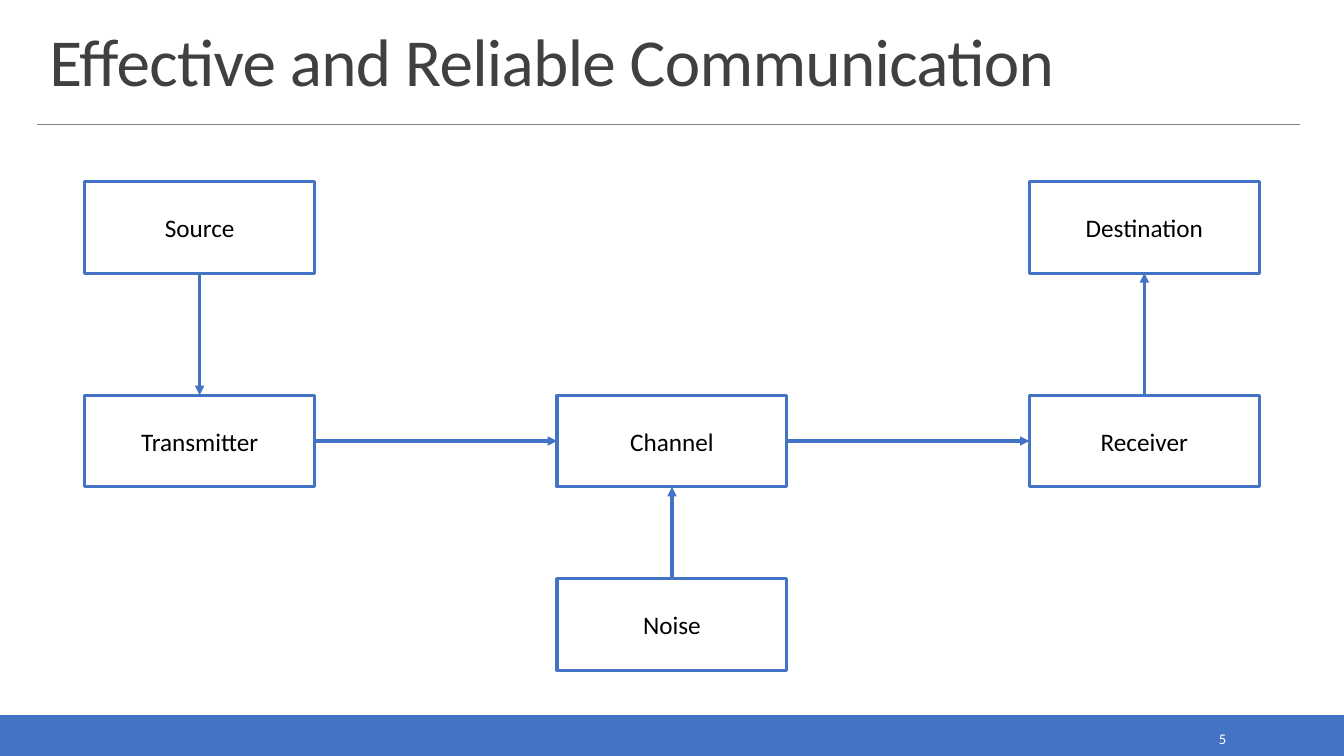
"""Builds the communication system block diagram slide."""
import pptx
import pptx.dml.color
import pptx.enum.shapes
import pptx.enum.text
import pptx.oxml.ns
import pptx.util
from lxml import etree

Inches = pptx.util.Inches
Pt = pptx.util.Pt
qn = pptx.oxml.ns.qn
RGBColor = pptx.dml.color.RGBColor
RECTANGLE = pptx.enum.shapes.MSO_SHAPE.RECTANGLE
MIDDLE = pptx.enum.text.MSO_ANCHOR.MIDDLE
ALIGN = pptx.enum.text.PP_ALIGN

BLUE = RGBColor(0x44, 0x72, 0xC4)
GRAY = RGBColor(0x80, 0x80, 0x80)
DARK = RGBColor(0x40, 0x40, 0x40)
BLACK = RGBColor(0, 0, 0)
WHITE = RGBColor(0xFF, 0xFF, 0xFF)

WIDTH, HEIGHT = 13.33, 7.5
BOX_WIDTH, BOX_HEIGHT = 2.28, 0.91
COLUMN_LEFT, COLUMN_STEP = 0.84, 4.685
ROW_TOPS = [1.8, 3.92, 5.74]
TOP, LEFT, BOTTOM, RIGHT = range(4)


def set_text(shape, text, size, color, alignment):
    frame = shape.text_frame
    frame.word_wrap = True
    frame.text = text
    paragraph = frame.paragraphs[0]
    paragraph.alignment = alignment
    paragraph.font.name = "Calibri"
    paragraph.font.size = Pt(size)
    paragraph.font.color.rgb = color
    return frame


def add_line(start, end, color, width):
    line = slide.shapes.add_connector(
        pptx.enum.shapes.MSO_CONNECTOR.STRAIGHT, *map(Inches, start + end))
    line.line.color.rgb = color
    line.line.width = Pt(width)
    etree.SubElement(line._element.spPr, qn("a:effectLst"))
    return line


presentation = pptx.Presentation()
presentation.slide_width = Inches(WIDTH)
presentation.slide_height = Inches(HEIGHT)
slide = presentation.slides.add_slide(presentation.slide_layouts[5])

footer = slide.shapes.add_shape(
    RECTANGLE, 0, Inches(7.1), Inches(WIDTH), Inches(HEIGHT - 7.1))
footer.shadow.inherit = False
footer.fill.solid()
footer.fill.fore_color.rgb = BLUE
footer.line.color.rgb = BLUE
footer.line.width = Pt(1.25)

add_line((0.37, 1.23), (12.89, 1.23), GRAY, 0.5)

title = slide.shapes.title
title.left, title.top = Inches(0.39), Inches(0.2)
title.width, title.height = Inches(12.52), Inches(0.84)
title_frame = set_text(
    title, "Effective and Reliable Communication", 48, DARK, ALIGN.LEFT)
title_frame.vertical_anchor = pptx.enum.text.MSO_ANCHOR.BOTTOM
title_frame.auto_size = pptx.enum.text.MSO_AUTO_SIZE.NONE
title_frame.paragraphs[0].line_spacing = 0.85
title_frame.paragraphs[0].runs[0].font._element.set("spc", "-50")

number = slide.shapes.add_textbox(
    Inches(10.83), Inches(7.19), Inches(1.43), Inches(0.28))
set_text(number, "5", 10.5, WHITE, ALIGN.RIGHT).vertical_anchor = MIDDLE

blocks = {}
for name, column, row in [
    ("Source", 0, 0),
    ("Transmitter", 0, 1),
    ("Channel", 1, 1),
    ("Noise", 1, 2),
    ("Destination", 2, 0),
    ("Receiver", 2, 1),
]:
    block = slide.shapes.add_shape(
        RECTANGLE, Inches(COLUMN_LEFT + column * COLUMN_STEP),
        Inches(ROW_TOPS[row]), Inches(BOX_WIDTH), Inches(BOX_HEIGHT))
    block.shadow.inherit = False
    block.fill.background()
    block.line.color.rgb = BLUE
    block.line.width = Pt(2.25)
    set_text(block, name, 18, BLACK, ALIGN.CENTER).vertical_anchor = MIDDLE
    blocks[name] = block

for origin, origin_side, target, target_side in [
    ("Source", BOTTOM, "Transmitter", TOP),
    ("Receiver", TOP, "Destination", BOTTOM),
    ("Channel", RIGHT, "Receiver", LEFT),
    ("Transmitter", RIGHT, "Channel", LEFT),
    ("Noise", TOP, "Channel", BOTTOM),
]:
    arrow = add_line((0, 0), (0, 0), BLUE, 2.25)
    arrow.begin_connect(blocks[origin], origin_side)
    arrow.end_connect(blocks[target], target_side)
    etree.SubElement(
        arrow.line._get_or_add_ln(), qn("a:tailEnd"), type="triangle")

presentation.save("out.pptx")
